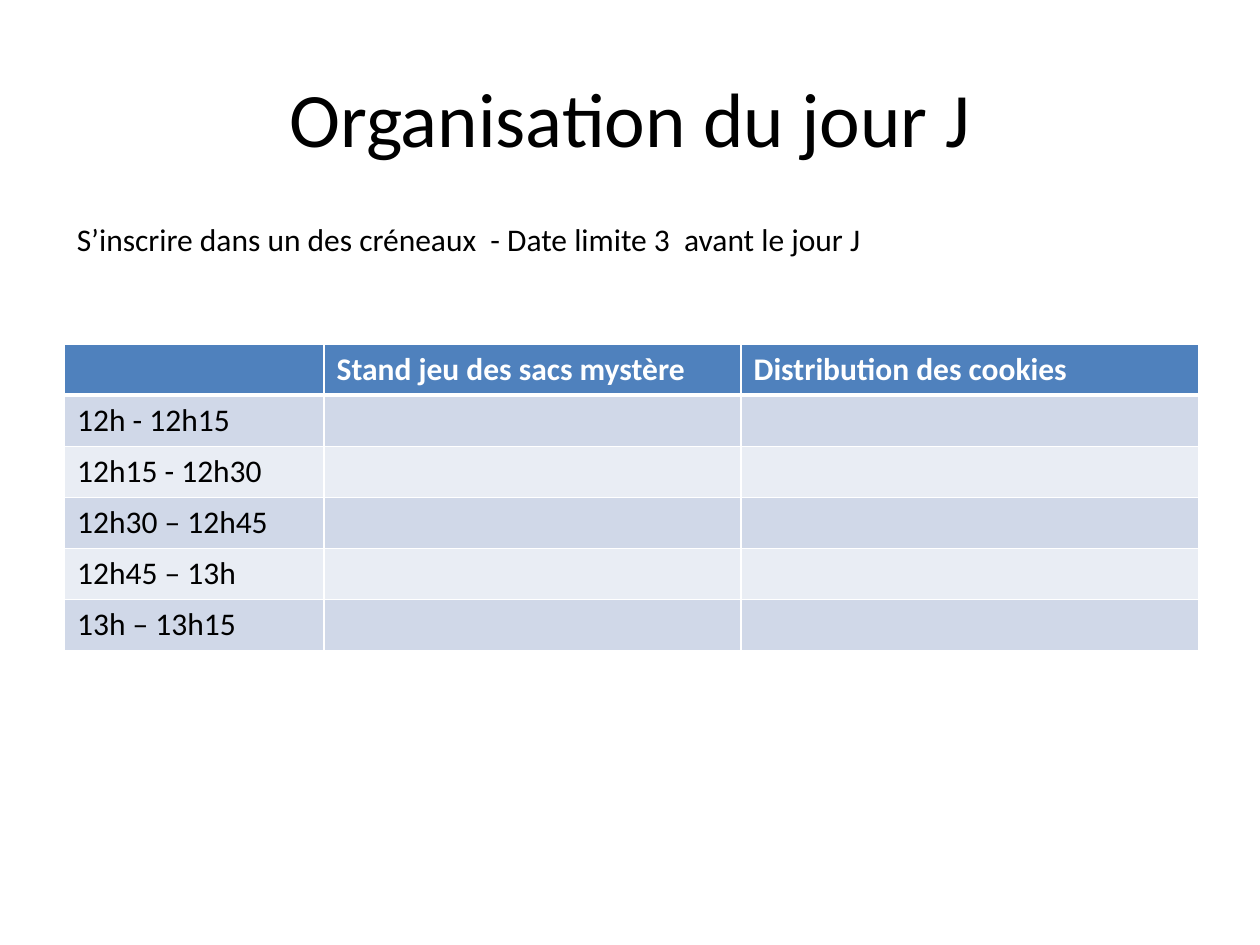
import pptx
import pptx.util
import pptx.dml.color
import pptx.enum.text
import lxml.etree
from dataclasses import dataclass
from pptx.util import Pt


@dataclass(frozen=True)
class Theme:
    font: str = "Calibri"
    title: int = 44
    body: int = 18
    ink: str = "000000"
    white: str = "FFFFFF"
    head: str = "4F81BD"
    bands: tuple = ("D0D8E8", "E9EDF4")


theme = Theme()


def style(para, size, color, bold=False):
    font = para.font
    font.name, font.size, font.bold = theme.font, Pt(size), bold
    font.color.rgb = pptx.dml.color.RGBColor.from_string(color)


def edge(cell, side, width):
    """Draw one white border; side is L, R, T or B, in that order."""
    props = cell._tc.get_or_add_tcPr()
    name = pptx.oxml.ns.qn(f"a:ln{side}")
    line = lxml.etree.SubElement(props, name, w=str(Pt(width)))
    fill = lxml.etree.SubElement(line, pptx.oxml.ns.qn("a:solidFill"))
    lxml.etree.SubElement(fill, pptx.oxml.ns.qn("a:srgbClr"), val=theme.white)


deck = pptx.Presentation()
deck.slide_width, deck.slide_height = Pt(720), Pt(540)
slide = deck.slides.add_slide(deck.slide_layouts[6])

# Title
title = slide.shapes.add_textbox(Pt(36), Pt(21.6), Pt(648), Pt(90)).text_frame
title.word_wrap = True
title.vertical_anchor = pptx.enum.text.MSO_ANCHOR.MIDDLE
title.text = "Organisation du jour J"
title.paragraphs[0].alignment = pptx.enum.text.PP_ALIGN.CENTER
style(title.paragraphs[0], theme.title, theme.ink)

# Timetable
heads = ["", "Stand jeu des sacs mystère", "Distribution des cookies"]
slots = ["12h - 12h15", "12h15 - 12h30", "12h30 – 12h45",
         "12h45 – 13h", "13h – 13h15"]
rows = [heads] + [[slot, "", ""] for slot in slots]
widths = [148.3, 238.3, 261.4]
high = 29.2

table = slide.shapes.add_table(
    len(rows), len(widths), Pt(36.9), Pt(196.6),
    Pt(sum(widths)), Pt(high * len(rows))).table
for col, width in zip(table.columns, widths):
    col.width = Pt(width)

for r, row in enumerate(rows):
    table.rows[r].height = Pt(high)
    top = r == 0
    shade = theme.head if top else theme.bands[(r - 1) % 2]
    for c, text in enumerate(row):
        cell = table.cell(r, c)
        for side in "LRTB":
            thick = (r, side) in ((0, "B"), (1, "T"))
            edge(cell, side, 3 if thick else 1)
        cell.fill.solid()
        cell.fill.fore_color.rgb = pptx.dml.color.RGBColor.from_string(shade)
        cell.text = text
        style(cell.text_frame.paragraphs[0], theme.body,
              theme.white if top else theme.ink, top)

# Sign-up note
note = slide.shapes.add_textbox(Pt(36.9), Pt(122.4), Pt(640.8), Pt(29)).text_frame
note.word_wrap = True
note.auto_size = pptx.enum.text.MSO_AUTO_SIZE.SHAPE_TO_FIT_TEXT
note.text = "S’inscrire dans un des créneaux  - Date limite 3  avant le jour J"
style(note.paragraphs[0], theme.body, theme.ink)

deck.save("out.pptx")
